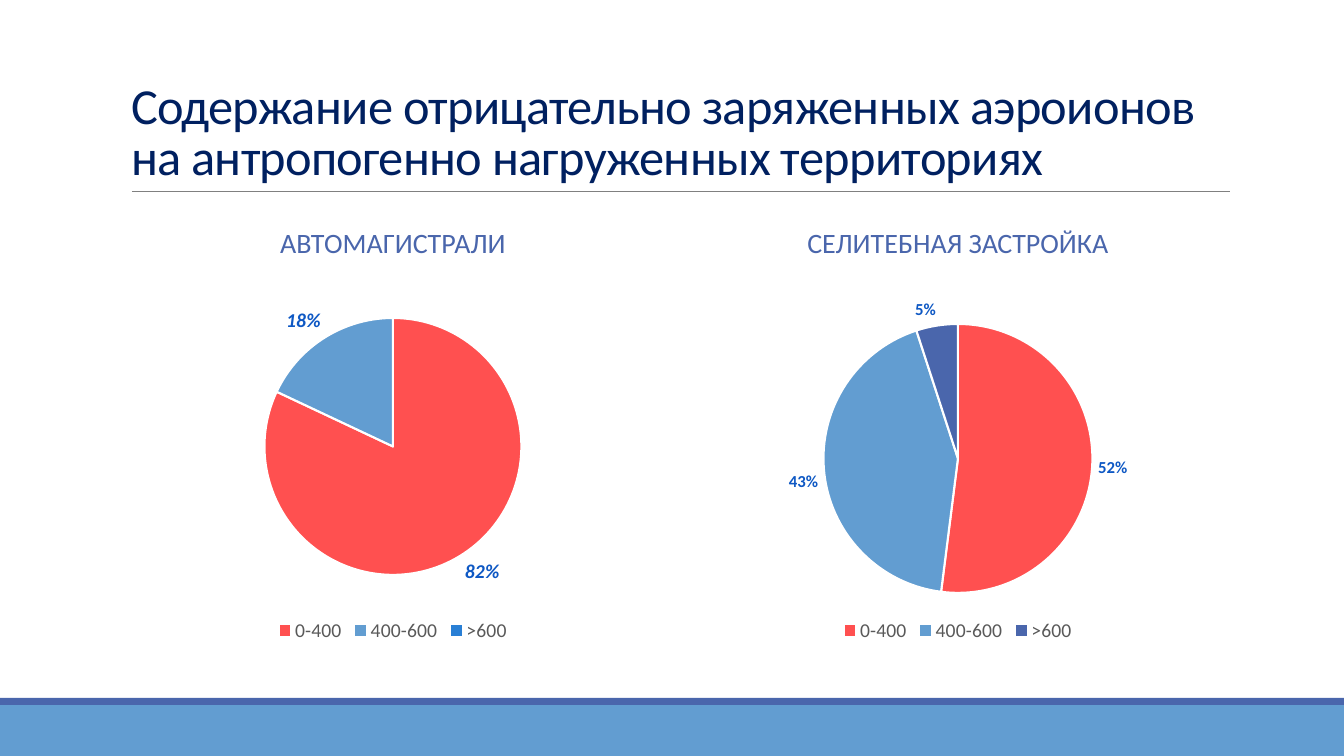
from dataclasses import dataclass

from lxml.etree import SubElement
from pptx import Presentation
from pptx.chart.data import CategoryChartData
from pptx.dml.color import RGBColor
from pptx.enum.chart import XL_CHART_TYPE, XL_LABEL_POSITION, XL_LEGEND_POSITION
from pptx.enum.shapes import MSO_CONNECTOR, MSO_SHAPE
from pptx.enum.text import MSO_ANCHOR, MSO_AUTO_SIZE, PP_ALIGN
from pptx.oxml import parse_xml
from pptx.oxml.ns import nsdecls, qn
from pptx.util import Pt


@dataclass(frozen=True)
class Theme:
    font: str = "Calibri"
    navy: str = "002060"
    indigo: str = "4A66AC"
    sky: str = "629DD1"
    azure: str = "297FD5"
    coral: str = "FF5050"
    label: str = "0E58C4"
    legend: str = "595959"
    rule: str = "808080"
    white: str = "FFFFFF"
    title_size: int = 36
    heading_size: int = 20
    legend_size: int = 14


THEME = Theme()
TITLE = "Содержание отрицательно заряженных аэроионов на антропогенно нагруженных территориях"
CATEGORIES = ["0-400", "400-600", ">600"]
PANELS = [
    {"heading": "АВТОМАГИСТРАЛИ", "values": [82, 18, 0],
     "colors": [THEME.coral, THEME.sky, THEME.azure],
     "label_size": 14, "italic": True, "pie_top": 318, "diameter": 257},
    {"heading": "СЕЛИТЕБНАЯ ЗАСТРОЙКА", "values": [52, 43, 5],
     "colors": [THEME.coral, THEME.sky, THEME.indigo],
     "label_size": 12, "italic": False, "pie_top": 324, "diameter": 269},
]
BANDS = [(705, 51, THEME.sky), (698, 7, THEME.indigo)]

PAGE_WIDTH, PAGE_HEIGHT = 1344, 756
LEFT, PANEL_WIDTH, PANEL_STEP = 121, 544, 565
HEADING_TOP, HEADING_HEIGHT = 204, 81
CHART_TOP, CHART_HEIGHT = 284, 363
EMU_PER_PX = 914400 / 100.8


def px(*lengths):
    return [round(length * EMU_PER_PX) for length in lengths]


def style(font, size, color):
    font.name = THEME.font
    font.size = Pt(size)
    font.color.rgb = RGBColor.from_string(color)


def add_band(page, top, height, color):
    band = page.shapes.add_shape(MSO_SHAPE.RECTANGLE, *px(0, top, PAGE_WIDTH, height))
    band.shadow.inherit = False
    band.fill.solid()
    band.fill.fore_color.rgb = RGBColor.from_string(color)
    band.line.fill.background()


def add_rule(page):
    rule = page.shapes.add_connector(MSO_CONNECTOR.STRAIGHT, *px(132, 191, 1230, 191))
    rule.line.color.rgb = RGBColor.from_string(THEME.rule)
    rule.line.width = Pt(0.5)
    SubElement(rule._element.spPr, qn("a:effectLst"))


def fill_title(page):
    title = page.shapes.title
    title.left, title.top, title.width, title.height = px(LEFT, 31, 1109, 160)
    frame = title.text_frame
    frame.text = TITLE
    frame.word_wrap = True
    frame.auto_size = MSO_AUTO_SIZE.NONE
    frame.vertical_anchor = MSO_ANCHOR.BOTTOM
    para = frame.paragraphs[0]
    para.alignment = PP_ALIGN.LEFT
    para.line_spacing = 0.85
    style(para.font, THEME.title_size, THEME.navy)
    para.runs[0]._r.get_or_add_rPr().set("spc", "-50")


def add_heading(page, left, text):
    box = page.shapes.add_textbox(*px(left, HEADING_TOP, PANEL_WIDTH, HEADING_HEIGHT))
    frame = box.text_frame
    frame.word_wrap = True
    frame.vertical_anchor = MSO_ANCHOR.MIDDLE
    para = frame.paragraphs[0]
    para.text = text
    para.alignment = PP_ALIGN.CENTER
    para.line_spacing = 0.9
    para.space_before, para.space_after = Pt(12), Pt(2)
    style(para.font, THEME.heading_size, THEME.indigo)


def place_pie(chart, top, diameter):
    bounds = {
        "x": (PANEL_WIDTH - diameter) / 2 / PANEL_WIDTH,
        "y": (top - CHART_TOP) / CHART_HEIGHT,
        "w": diameter / PANEL_WIDTH,
        "h": diameter / CHART_HEIGHT,
    }
    edges = "".join(f'<c:{name} val="{value:.4f}"/>' for name, value in bounds.items())
    layout = parse_xml(
        f'<c:layout {nsdecls("c")}><c:manualLayout><c:layoutTarget val="inner"/>'
        f'<c:xMode val="edge"/><c:yMode val="edge"/>{edges}</c:manualLayout></c:layout>'
    )
    plot_area = chart._chartSpace.chart.plotArea
    for old_layout in plot_area.findall(qn("c:layout")):
        plot_area.remove(old_layout)
    plot_area.insert(0, layout)


def add_pie(page, left, panel):
    data = CategoryChartData()
    data.categories = CATEGORIES
    data.add_series("Series 1", panel["values"])
    chart = page.shapes.add_chart(
        XL_CHART_TYPE.PIE, *px(left, CHART_TOP, PANEL_WIDTH, CHART_HEIGHT), data
    ).chart
    style(chart.font, THEME.legend_size, THEME.legend)
    chart.has_title = False
    chart.has_legend = True
    chart.legend.position = XL_LEGEND_POSITION.BOTTOM
    chart.legend.include_in_layout = False
    style(chart.legend.font, THEME.legend_size, THEME.legend)
    plot = chart.plots[0]
    plot.vary_by_categories = True
    for index, color in enumerate(panel["colors"]):
        slice_format = plot.series[0].points[index].format
        slice_format.fill.solid()
        slice_format.fill.fore_color.rgb = RGBColor.from_string(color)
        slice_format.line.color.rgb = RGBColor.from_string(THEME.white)
        slice_format.line.width = Pt(1.5)
    plot.has_data_labels = True
    labels = plot.data_labels
    labels.show_percentage = True
    labels.show_value = False
    labels.number_format = "0%;;"
    labels.number_format_is_linked = False
    labels.position = XL_LABEL_POSITION.OUTSIDE_END
    style(labels.font, panel["label_size"], THEME.label)
    labels.font.bold = True
    labels.font.italic = panel["italic"]
    place_pie(chart, panel["pie_top"], panel["diameter"])


def main():
    deck = Presentation()
    deck.slide_width, deck.slide_height = px(PAGE_WIDTH, PAGE_HEIGHT)
    page = deck.slides.add_slide(deck.slide_layouts[5])
    for band in BANDS:
        add_band(page, *band)
    add_rule(page)
    fill_title(page)
    for index, panel in enumerate(PANELS):
        left = LEFT + index * PANEL_STEP
        add_heading(page, left, panel["heading"])
        add_pie(page, left, panel)
    deck.save("out.pptx")


if __name__ == "__main__":
    main()
